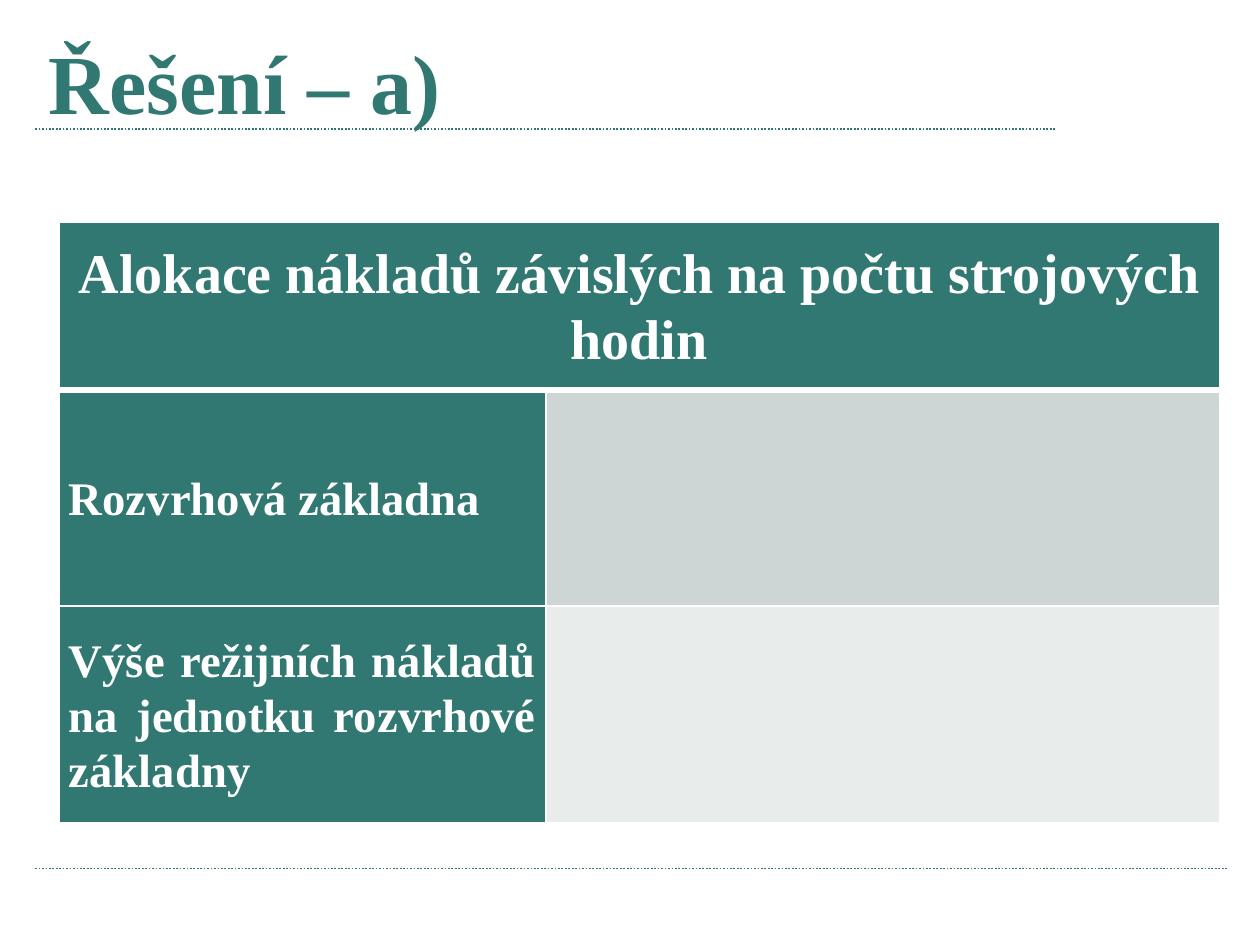
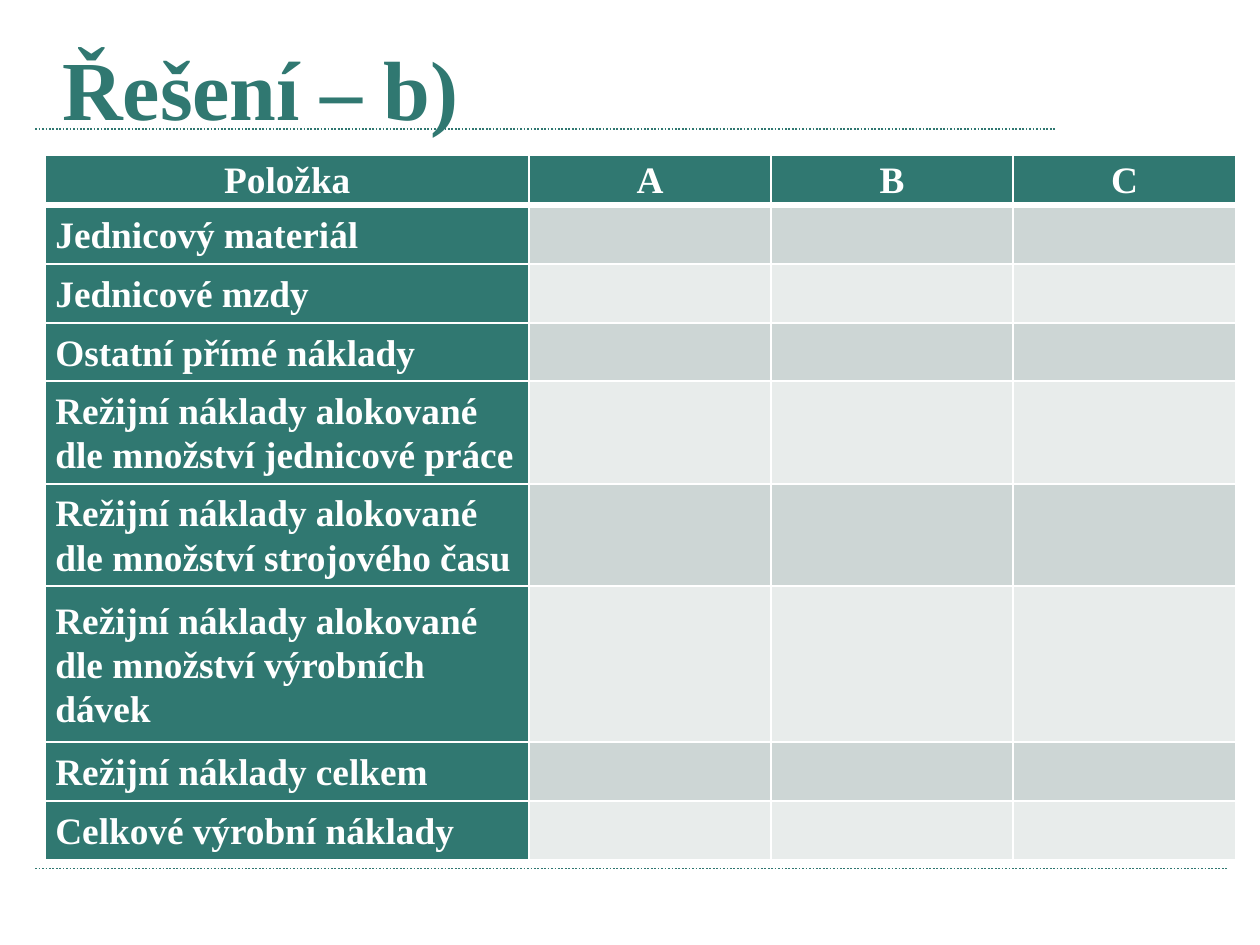
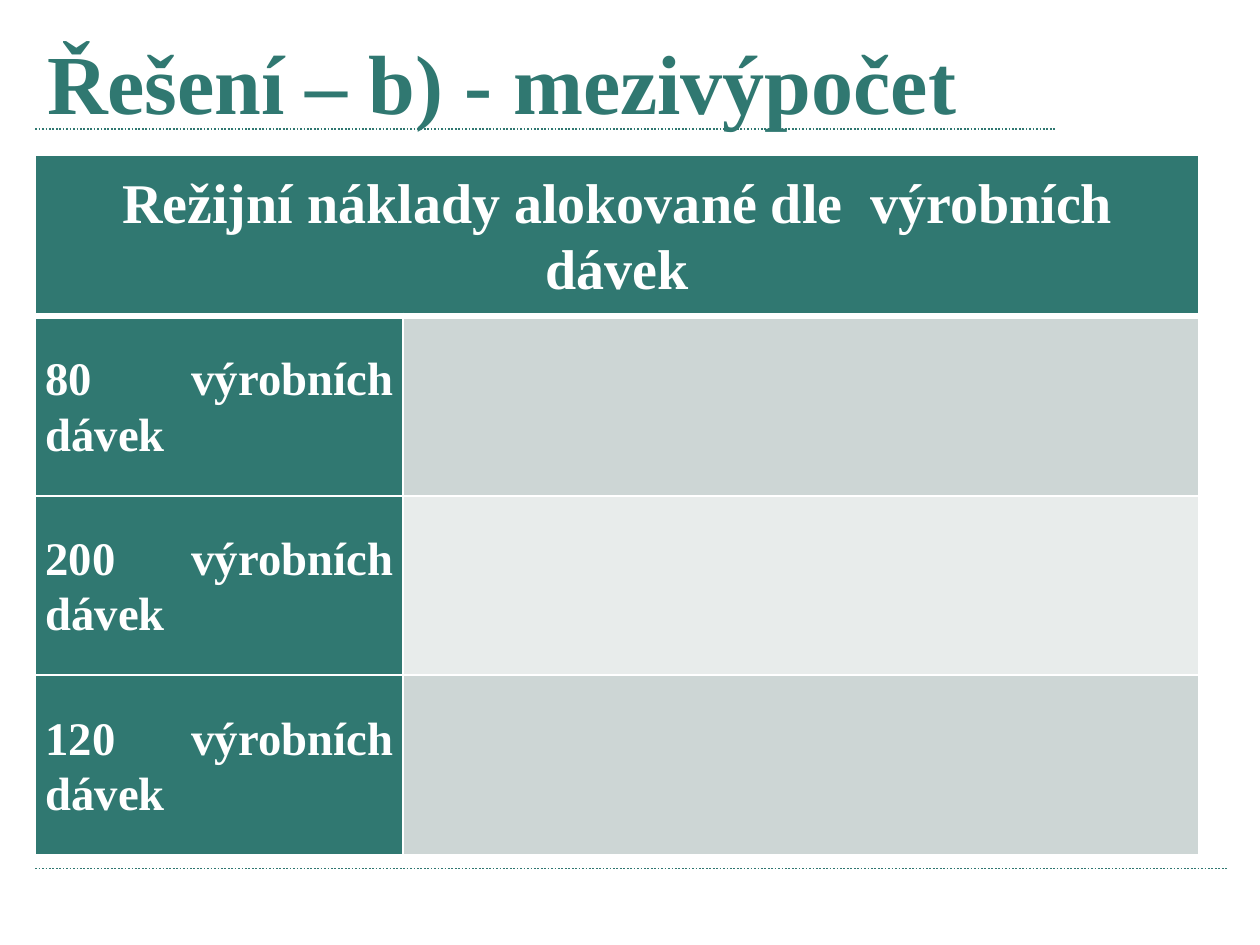
from lxml.etree import SubElement
from pptx import Presentation
from pptx.dml.color import RGBColor
from pptx.enum.dml import MSO_LINE
from pptx.enum.shapes import MSO_CONNECTOR
from pptx.enum.text import MSO_ANCHOR, MSO_AUTO_SIZE, PP_ALIGN
from pptx.oxml.ns import qn
from pptx.util import Inches, Pt

# Shared look
TEAL = RGBColor(0x30, 0x78, 0x71)
WHITE = RGBColor(0xFF, 0xFF, 0xFF)
BAND_DARK = RGBColor(0xCD, 0xD6, 0xD5)
BAND_LIGHT = RGBColor(0xE8, 0xEC, 0xEB)
FONT = "Times New Roman"
TITLE_ONLY = 5
THIN, THICK = 1, 3


def add_run(paragraph, text, size, color):
    run = paragraph.add_run()
    run.text = text
    run.font.name = FONT
    run.font.size = Pt(size)
    run.font.bold = True
    run.font.color.rgb = color


def add_layout_rule(slide, y, right):
    """Draw a dotted rule and hand it to the layout, so every slide shows it."""
    rule = slide.shapes.add_connector(
        MSO_CONNECTOR.STRAIGHT, Inches(0.21), Inches(y), Inches(right), Inches(y))
    rule.line.color.rgb = TEAL
    rule.line.width = Pt(0.75)
    rule.line.dash_style = MSO_LINE.ROUND_DOT
    SubElement(rule._element.spPr, qn("a:effectLst"))
    slide.slide_layout.shapes._spTree.append(rule._element)


def add_titled_slide(prs, title_text, left, top):
    slide = prs.slides.add_slide(prs.slide_layouts[TITLE_ONLY])
    title = slide.shapes.title
    title.left, title.top = Inches(left), Inches(top)
    title.width, title.height = Inches(6.61), Inches(0.59)
    frame = title.text_frame
    frame.auto_size = MSO_AUTO_SIZE.NONE
    frame.vertical_anchor = MSO_ANCHOR.TOP
    frame.margin_top, frame.margin_bottom = Inches(0.04), 0
    paragraph = frame.paragraphs[0]
    paragraph.alignment = PP_ALIGN.LEFT
    add_run(paragraph, title_text, 36, TEAL)
    return slide


def set_borders(cell, top, bottom):
    widths = {"a:lnL": THIN, "a:lnR": THIN, "a:lnT": top, "a:lnB": bottom}
    for tag, width in widths.items():
        border = SubElement(cell._tc.get_or_add_tcPr(), qn(tag), w=str(Pt(width)))
        fill = SubElement(border, qn("a:solidFill"))
        SubElement(fill, qn("a:srgbClr"), val=str(WHITE))


def format_cell(cell, row, column):
    set_borders(cell, THICK if row == 1 else THIN, THICK if row == 0 else THIN)
    cell.fill.solid()
    if row == 0 or column == 0:
        cell.fill.fore_color.rgb = TEAL
    else:
        cell.fill.fore_color.rgb = BAND_DARK if row % 2 else BAND_LIGHT
    cell.margin_left = cell.margin_right = Inches(0.06)
    cell.margin_top = cell.margin_bottom = 0
    cell.vertical_anchor = MSO_ANCHOR.MIDDLE


def write_cell(cell, text, size, alignment):
    paragraph = cell.text_frame.paragraphs[0]
    paragraph.alignment = alignment
    paragraph.line_spacing = 1.07
    add_run(paragraph, text, size, WHITE)


def add_cost_table(slide, left, top, widths, heights, headers, labels,
                   header_size, label_size, label_alignment):
    """Add a table with a header row, a label column and cells to fill in."""
    table = slide.shapes.add_table(
        len(heights), len(widths), Inches(left), Inches(top),
        Inches(sum(widths)), Inches(sum(heights))).table
    for column, width in zip(table.columns, widths):
        column.width = Inches(width)
    for r, height in enumerate(heights):
        table.rows[r].height = Inches(height)
        for c in range(len(widths)):
            format_cell(table.cell(r, c), r, c)
    if len(headers) == 1:
        table.cell(0, 0).merge(table.cell(0, len(widths) - 1))
    for c, header in enumerate(headers):
        write_cell(table.cell(0, c), header, header_size, PP_ALIGN.CENTER)
    for r, label in enumerate(labels, start=1):
        write_cell(table.cell(r, 0), label, label_size, label_alignment)


def main():
    prs = Presentation()
    # Slides in the proportion 4:3
    prs.slide_width = Inches(7.5)
    prs.slide_height = prs.slide_width * 3 // 4

    # Machine hours
    machine_hours = add_titled_slide(prs, "Řešení – a)", 0.19, 0.14)
    add_layout_rule(machine_hours, 0.77, 6.29)
    add_layout_rule(machine_hours, 5.17, 7.31)
    add_cost_table(
        machine_hours, 0.35, 1.32, [2.9, 4.01], [1, 1.29, 1.29],
        ["Alokace nákladů závislých na počtu strojových hodin"],
        ["Rozvrhová základna",
         "Výše režijních nákladů na jednotku rozvrhové základny"],
        24, 20, PP_ALIGN.JUSTIFY)

    # Costs by product
    product_costs = add_titled_slide(prs, "Řešení – b)", 0.27, 0.18)
    add_cost_table(
        product_costs, 0.27, 0.92, [2.88, 1.44, 1.44, 1.33],
        [0.3, 0.35, 0.35, 0.35, 0.61, 0.61, 0.93, 0.35, 0.35],
        ["Položka", "A", "B", "C"],
        ["Jednicový materiál",
         "Jednicové mzdy",
         "Ostatní přímé náklady",
         "Režijní náklady alokované dle množství jednicové práce",
         "Režijní náklady alokované dle množství strojového času",
         "Režijní náklady alokované dle množství výrobních dávek",
         "Režijní náklady celkem",
         "Celkové výrobní náklady"],
        16, 16, PP_ALIGN.LEFT)

    # Production batches
    batches = add_titled_slide(prs, "Řešení – b) - mezivýpočet", 0.18, 0.14)
    add_cost_table(
        batches, 0.21, 0.92, [2.19, 4.74], [0.96, 1.07, 1.07, 1.07],
        ["Režijní náklady alokované dle  výrobních dávek"],
        [f"{count} výrobních dávek" for count in (80, 200, 120)],
        24, 20, PP_ALIGN.JUSTIFY)

    prs.save("out.pptx")


if __name__ == "__main__":
    main()
